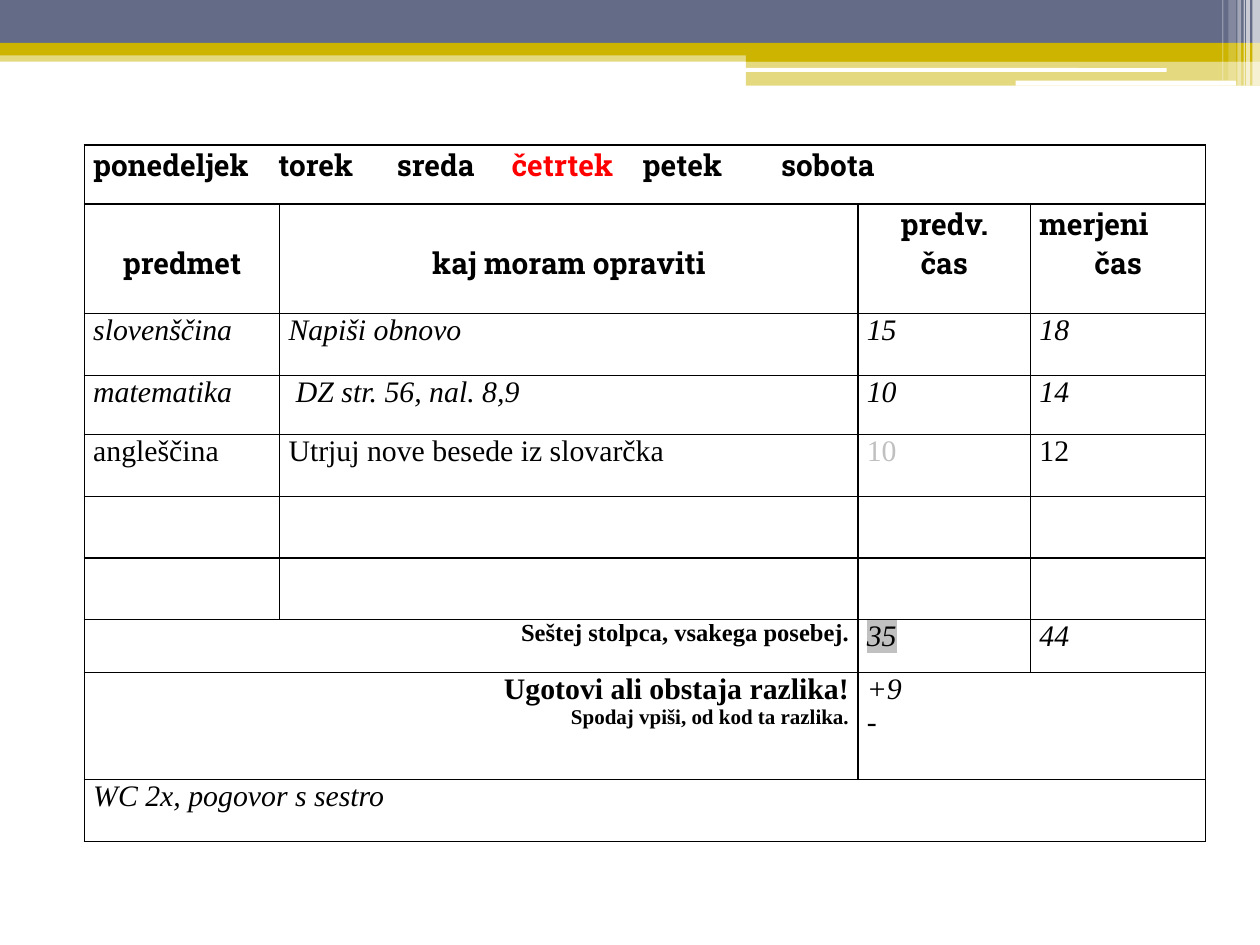
import pptx
import pptx.util
import pptx.dml.color
import pptx.enum.shapes
import pptx.enum.text
import pptx.oxml
import pptx.oxml.ns

COLORS = {
    "slate": "646B86", "gold": "CCB400", "white": "FFFFFF",
    "black": "000000", "red": "FF0000", "grey": "C0C0C0",
}

BANDS = [
    ("rect", 0, 0.4, 10, 0.09, "gold", 50),
    ("rect", 0, 0, 10, 0.34, "slate", 100),
    ("rect", 0, 0.34, 10, 0.1, "gold", 100),
    ("rect", 5.92, 0.39, 4.08, 0.1, "gold", 100),
    ("rect", 5.92, 0.48, 4.08, 0.2, "gold", 50),
    ("round", 5.91, 0.54, 3.35, 0.03, "white", 100),
    ("round", 8.06, 0.64, 1.75, 0.04, "white", 100),
]
STRIPES = [
    (9.94, 0.06, 0.68, 65), (9.89, 0.03, 0.68, 65), (9.87, 0.01, 0.68, 60),
    (9.82, 0.03, 0.68, 40), (9.75, 0.06, 0.64, 20), (9.7, 0.01, 0.64, 30),
]

TABLE_LEFT, TABLE_TOP = 0.67, 1.15
COLUMN_WIDTHS = [1.55, 4.59, 1.37, 1.39]
ROW_HEIGHTS = [0.47, 0.87, 0.49, 0.47, 0.49, 0.49, 0.49, 0.42, 0.85, 0.49]
MERGES = [(0, 0, 3), (7, 0, 1), (8, 0, 1), (8, 2, 3), (9, 0, 3)]
DAY_TABS = [1.47, 2.41, 3.32, 4.36, 5.46]
HEADER_LINE = 0.31

STYLES = {
    "heading": {"font": "Roboto Slab", "bold": True},
    "example": {"italic": True},
    "plain": {},
    "faded": {"color": "grey"},
    "marked": {"italic": True, "highlight": "grey"},
    "strong": {"bold": True},
    "instruction": {"bold": True, "size": 14},
    "hint": {"bold": True, "size": 12},
    "today": {"font": "Roboto Slab", "bold": True, "color": "red"},
}

DAYS = [("ponedeljek\ttorek\tsreda\t", "heading"), ("četrtek", "today"), ("\tpetek\tsobota", "heading")]
CELLS = {
    (0, 0): [("left", DAYS)],
    (1, 0): [("center", [("predmet", "heading")])],
    (1, 1): [("center", [("kaj moram opraviti", "heading")])],
    (1, 2): [("center", [("predv.", "heading")]), ("center", [("čas", "heading")])],
    (1, 3): [("left", [("merjeni", "heading")]), ("center", [("čas", "heading")])],
    (7, 0): [("right", [("Seštej stolpca, vsakega posebej.", "instruction")])],
    (7, 2): [("left", [("35", "marked")])],
    (7, 3): [("left", [("44", "example")])],
    (8, 0): [("right", [("Ugotovi ali obstaja razlika!", "strong")]),
             ("right", [("Spodaj vpiši, od kod ta razlika.", "hint")])],
    (8, 2): [("left", [("+9", "example")]), ("left", [("-", "example")])],
    (9, 0): [("left", [("WC 2x, pogovor s sestro", "example")])],
}
TASKS = [
    ("example", ["slovenščina", "Napiši obnovo", "15", "18"]),
    ("example", ["matematika", " DZ str. 56, nal. 8,9", "10", "14"]),
    ("plain", ["angleščina", "Utrjuj nove besede iz slovarčka", "10", "12"]),
]
FADED_CELL = (4, 2)
for row, (style, texts) in enumerate(TASKS, start=2):
    for column, text in enumerate(texts):
        cell_style = "faded" if (row, column) == FADED_CELL else style
        CELLS[row, column] = [("left", [(text, cell_style)])]

inches = pptx.util.Inches
ALIGNMENTS = {
    "left": pptx.enum.text.PP_ALIGN.LEFT,
    "center": pptx.enum.text.PP_ALIGN.CENTER,
    "right": pptx.enum.text.PP_ALIGN.RIGHT,
}
GEOMETRIES = {
    "rect": pptx.enum.shapes.MSO_SHAPE.RECTANGLE,
    "round": pptx.enum.shapes.MSO_SHAPE.ROUNDED_RECTANGLE,
}


def color(name):
    return pptx.dml.color.RGBColor.from_string(COLORS[name])


def element(xml):
    return pptx.oxml.parse_xml(xml.replace(">", f" {pptx.oxml.ns.nsdecls('a')}>", 1))


def add_band(slide, geometry, left, top, width, height, fill, opacity):
    shape = slide.shapes.add_shape(GEOMETRIES[geometry], *map(inches, (left, top, width, height)))
    shape.shadow.inherit = False
    shape.line.fill.background()
    shape.fill.solid()
    shape.fill.fore_color.rgb = color(fill)
    if opacity < 100:
        fill_color = shape.fill._xPr.find(".//" + pptx.oxml.ns.qn("a:srgbClr"))
        fill_color.append(element(f'<a:alpha val="{opacity * 1000}"></a:alpha>'))


def format_run(run, font="Times New Roman", size=17, bold=False, italic=False,
               color_name="black", highlight=None):
    run.font.name = font
    run.font.size = pptx.util.Pt(size)
    run.font.bold = bold
    run.font.italic = italic
    run.font.color.rgb = color(color_name)
    if highlight:
        solid_fill = run.font._element.find(pptx.oxml.ns.qn("a:solidFill"))
        solid_fill.addnext(element(
            f'<a:highlight><a:srgbClr val="{COLORS[highlight]}"/></a:highlight>'))


def format_cell(cell):
    cell.margin_left = cell.margin_right = inches(0.07)
    cell.margin_top = cell.margin_bottom = 0
    cell.fill.background()
    properties = cell._tc.get_or_add_tcPr()
    for index, side in enumerate("LRTB"):
        properties.insert(index, element(
            f'<a:ln{side} w="12700"><a:solidFill><a:srgbClr val="{COLORS["black"]}"/>'
            f'</a:solidFill></a:ln{side}>'))


def write_cell(cell, paragraphs):
    for index, (alignment, runs) in enumerate(paragraphs):
        frame = cell.text_frame
        paragraph = frame.add_paragraph() if index else frame.paragraphs[0]
        paragraph.alignment = ALIGNMENTS[alignment]
        for text, style in runs:
            run = paragraph.add_run()
            run.text = text
            options = dict(STYLES[style])
            format_run(run, color_name=options.pop("color", "black"), **options)


def add_planner(slide):
    frame = slide.shapes.add_table(
        len(ROW_HEIGHTS), len(COLUMN_WIDTHS), inches(TABLE_LEFT), inches(TABLE_TOP),
        inches(sum(COLUMN_WIDTHS)), inches(sum(ROW_HEIGHTS)))
    table = frame.table
    table.first_row = table.horz_banding = False
    for column, width in zip(table.columns, COLUMN_WIDTHS):
        column.width = inches(width)
    for row, height in zip(table.rows, ROW_HEIGHTS):
        row.height = inches(height)
    for cell in table.iter_cells():
        format_cell(cell)
    for row, first, last in MERGES:
        table.cell(row, first).merge(table.cell(row, last))
    for position, paragraphs in CELLS.items():
        write_cell(table.cell(*position), paragraphs)
    for column in (0, 1):
        table.cell(1, column).margin_top = inches(HEADER_LINE)
    tabs = "".join(f'<a:tab pos="{inches(stop)}" algn="l"/>' for stop in DAY_TABS)
    days = table.cell(0, 0).text_frame.paragraphs[0]
    days._p.get_or_add_pPr().append(element(f"<a:tabLst>{tabs}</a:tabLst>"))


def main():
    presentation = pptx.Presentation()
    presentation.slide_width, presentation.slide_height = inches(10), inches(7.5)
    slide = presentation.slides.add_slide(presentation.slide_layouts[6])
    for band in BANDS:
        add_band(slide, *band)
    for left, width, height, opacity in STRIPES:
        add_band(slide, "rect", left, 0, width, height, "white", opacity)
    add_planner(slide)
    presentation.save("out.pptx")


if __name__ == "__main__":
    main()
